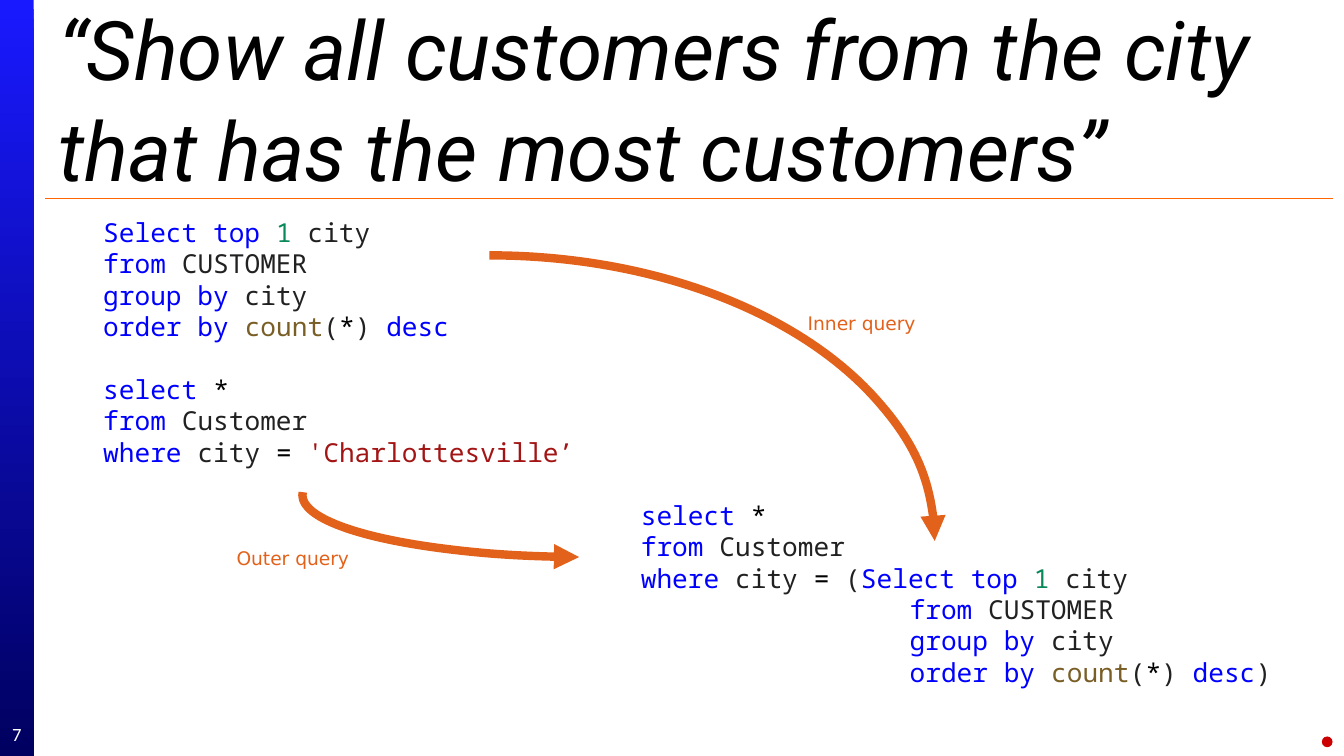
"""Build a slide that nests one SQL query inside another."""
from typing import NamedTuple

from lxml import etree
from pptx import Presentation
from pptx.dml.color import RGBColor
from pptx.enum.shapes import MSO_CONNECTOR, MSO_SHAPE
from pptx.enum.text import MSO_ANCHOR, MSO_AUTO_SIZE, PP_ALIGN
from pptx.oxml.ns import qn
from pptx.util import Emu, Pt

LINE = MSO_CONNECTOR.STRAIGHT
RECT, ARC, OVAL = MSO_SHAPE.RECTANGLE, MSO_SHAPE.ARC, MSO_SHAPE.OVAL
MIDDLE, FIT = MSO_ANCHOR.MIDDLE, MSO_AUTO_SIZE.SHAPE_TO_FIT_TEXT
CENTER, RIGHT = PP_ALIGN.CENTER, PP_ALIGN.RIGHT
SCALE = 4572
WIDTH, HEIGHT = 2000, 1125
PITCH = 16.84
COLORS = {
    "white": "FFFFFF", "black": "000000", "blue_top": "1919FF", "blue_bottom": "000060",
    "rule": "FF6600", "arrow": "E3621B", "dot": "CC0000", "keyword": "0000FF",
    "name": "212121", "number": "09885A", "function": "795E26", "string": "A31515",
}


class Box(NamedTuple):
    x: int
    y: int
    w: int
    h: int


class Style(NamedTuple):
    font: str
    size: int
    italic: bool = False


class Run(NamedTuple):
    text: str
    color: str


class Line(NamedTuple):
    runs: list[Run]
    indent: int = 0
    gap: bool = False


class Arrow(NamedTuple):
    box: Box
    start: float
    end: float
    rotation: int = 0
    flip: bool = False


class Label(NamedTuple):
    box: Box
    text: str


TITLE = Style("Roboto", 44, True)
CODE = Style("Noto Sans Mono", 14)
LABEL = Style("DejaVu Sans", 10)
NUMBER = Style("Calibri", 10)

SELECT_TOP = [Run("Select top ", "keyword"), Run("1", "number"), Run(" city", "name")]
SELECT_ALL = [Run("select ", "keyword"), Run("*", "black")]
FROM_CUSTOMER = [Run("from", "keyword"), Run(" Customer", "name")]
WHERE_CITY = [Run("where", "keyword"), Run(" city ", "name")]
FROM_UPPER = [Run("from", "keyword"), Run(" CUSTOMER", "name")]
GROUP_BY = [Run("group by", "keyword"), Run(" city", "name")]
ORDER_BY = [Run("order by ", "keyword"), Run("count", "function"), Run("(", "name"),
            Run("*", "black"), Run(") ", "name"), Run("desc", "keyword")]
OUTER, INNER = 800, 1200
QUERIES = [
    Line(SELECT_TOP), Line(FROM_UPPER), Line(GROUP_BY), Line(ORDER_BY),
    Line(SELECT_ALL, gap=True), Line(FROM_CUSTOMER),
    Line(WHERE_CITY + [Run("= ", "black"), Run("'Charlottesville’", "string")]),
    Line(SELECT_ALL, OUTER, True), Line(FROM_CUSTOMER, OUTER),
    Line(WHERE_CITY + [Run("=", "black"), Run(" (", "name")] + SELECT_TOP, OUTER),
    Line(FROM_UPPER, INNER), Line(GROUP_BY, INNER),
    Line(ORDER_BY + [Run(")", "name")], INNER),
]
INNER_ARROW = Arrow(Box(67, 380, 1324, 850), 161.93, 0)
OUTER_ARROW = Arrow(Box(783, 312, 184, 850), 161.63, 211.1, 270, True)
LABELS = [Label(Box(1174, 454, 208, 54), "Inner query"),
          Label(Box(329, 804, 210, 54), "Outer query")]


def px(n: int) -> Emu:
    """Turn px into EMU."""
    return Emu(n * SCALE)


def rgb(name: str) -> RGBColor:
    """Look up a colour."""
    return RGBColor.from_string(COLORS[name])


def add_run(p, run: Run, style: Style) -> None:
    """Append a styled run to a paragraph."""
    r = p.add_run()
    r.text = run.text
    r.font.name, r.font.size, r.font.italic = style.font, Pt(style.size), style.italic
    r.font.color.rgb = rgb(run.color)


def add_text(s, box: Box, wrap: bool = True):
    """Add an empty text box."""
    sp = s.shapes.add_textbox(*map(px, box))
    sp.text_frame.word_wrap = wrap
    return sp


def add_shape(s, kind, box: Box):
    """Add a preset shape without outline or shadow."""
    sp = s.shapes.add_shape(kind, *map(px, box))
    sp.shadow.inherit = False
    sp.line.fill.background()
    return sp


def add_sidebar(s) -> None:
    """Draw the gradient bar with the slide number."""
    fill = add_shape(s, RECT, Box(0, 0, 50, HEIGHT)).fill
    fill.gradient()
    fill.gradient_angle = 270
    for stop, name in zip(fill.gradient_stops, ("blue_top", "blue_bottom")):
        stop.color.rgb = rgb(name)
    tf = add_text(s, Box(0, 1063, 50, 60)).text_frame
    tf.margin_left = tf.margin_right = tf.margin_top = tf.margin_bottom = 0
    tf.vertical_anchor = MIDDLE
    p = tf.paragraphs[0]
    p.alignment = CENTER
    add_run(p, Run("7", "white"), NUMBER)


def add_title(s) -> None:
    """Draw the heading and the rule below it."""
    rule = s.shapes.add_connector(LINE, px(67), px(295), px(1984), px(295))
    rule.line.color.rgb, rule.line.width = rgb("rule"), Pt(0.75)
    etree.SubElement(rule._element.spPr, qn("a:effectLst"))
    sp = add_text(s, Box(67, 12, 1916, 266))
    sp.fill.solid()
    sp.fill.fore_color.rgb = rgb("white")
    tf = sp.text_frame
    tf.vertical_anchor = MIDDLE
    p = tf.paragraphs[0]
    p.line_spacing = Pt(53.6)
    add_run(p, Run("“Show all customers from the city", "black"), TITLE)
    p.add_line_break()
    add_run(p, Run("that has the most customers”", "black"), TITLE)


def add_arrow(s, arrow: Arrow) -> None:
    """Draw an arc that ends in an arrowhead."""
    sp = add_shape(s, ARC, arrow.box)
    sp.adjustments[0], sp.adjustments[1] = arrow.start, arrow.end
    sp.rotation = arrow.rotation
    sp.fill.background()
    sp.line.color.rgb, sp.line.width = rgb("arrow"), Pt(4.5)
    etree.SubElement(sp.line._get_or_add_ln(), qn("a:tailEnd"), type="triangle")
    if arrow.flip:
        sp._element.spPr.find(qn("a:xfrm")).set("flipH", "1")


def add_queries(s, lines: list[Line]) -> None:
    """Write the highlighted code lines."""
    tf = add_text(s, Box(134, 312, 1800, 728)).text_frame
    tf.auto_size = FIT
    for i, line in enumerate(lines):
        p = tf.add_paragraph() if i else tf.paragraphs[0]
        p.line_spacing = Pt(PITCH)
        p.space_before = Pt(PITCH if line.gap else 0)
        p._p.get_or_add_pPr().set("marL", str(px(line.indent)))
        for run in line.runs:
            add_run(p, run, CODE)


def add_label(s, label: Label) -> None:
    """Write the caption of an arrow."""
    tf = add_text(s, label.box, False).text_frame
    tf.auto_size = FIT
    p = tf.paragraphs[0]
    p.alignment = RIGHT
    add_run(p, Run(label.text, "arrow"), LABEL)


def main() -> None:
    """Build and save the slide."""
    prs = Presentation()
    prs.slide_width, prs.slide_height = px(WIDTH), px(HEIGHT)
    s = prs.slides.add_slide(prs.slide_layouts[6])
    add_sidebar(s)
    add_title(s)
    add_arrow(s, INNER_ARROW)
    add_queries(s, QUERIES)
    add_arrow(s, OUTER_ARROW)
    for label in LABELS:
        add_label(s, label)
    dot = add_shape(s, OVAL, Box(1967, 1096, 16, 16))
    dot.fill.solid()
    dot.fill.fore_color.rgb = rgb("dot")
    prs.save("out.pptx")


if __name__ == "__main__":
    main()
